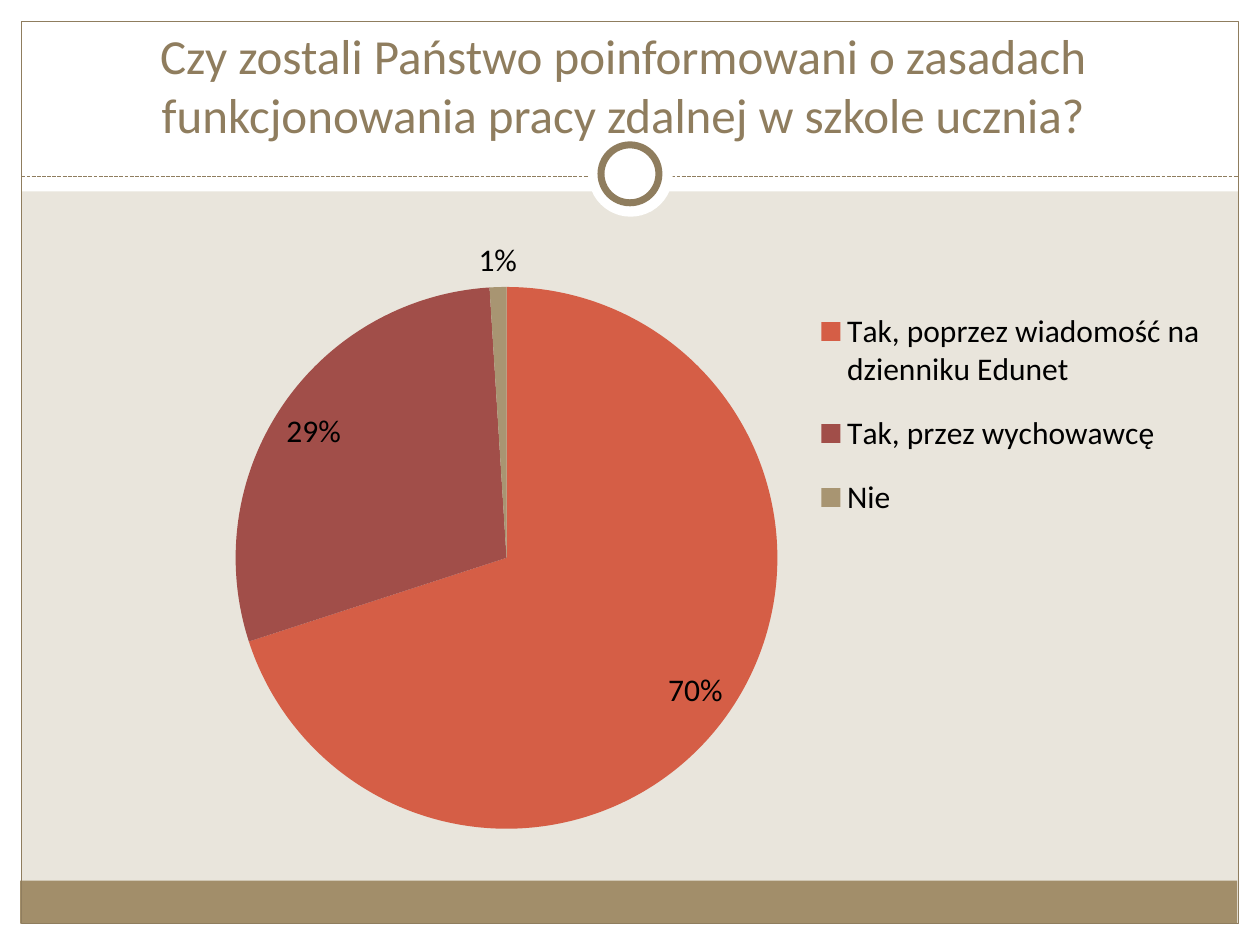
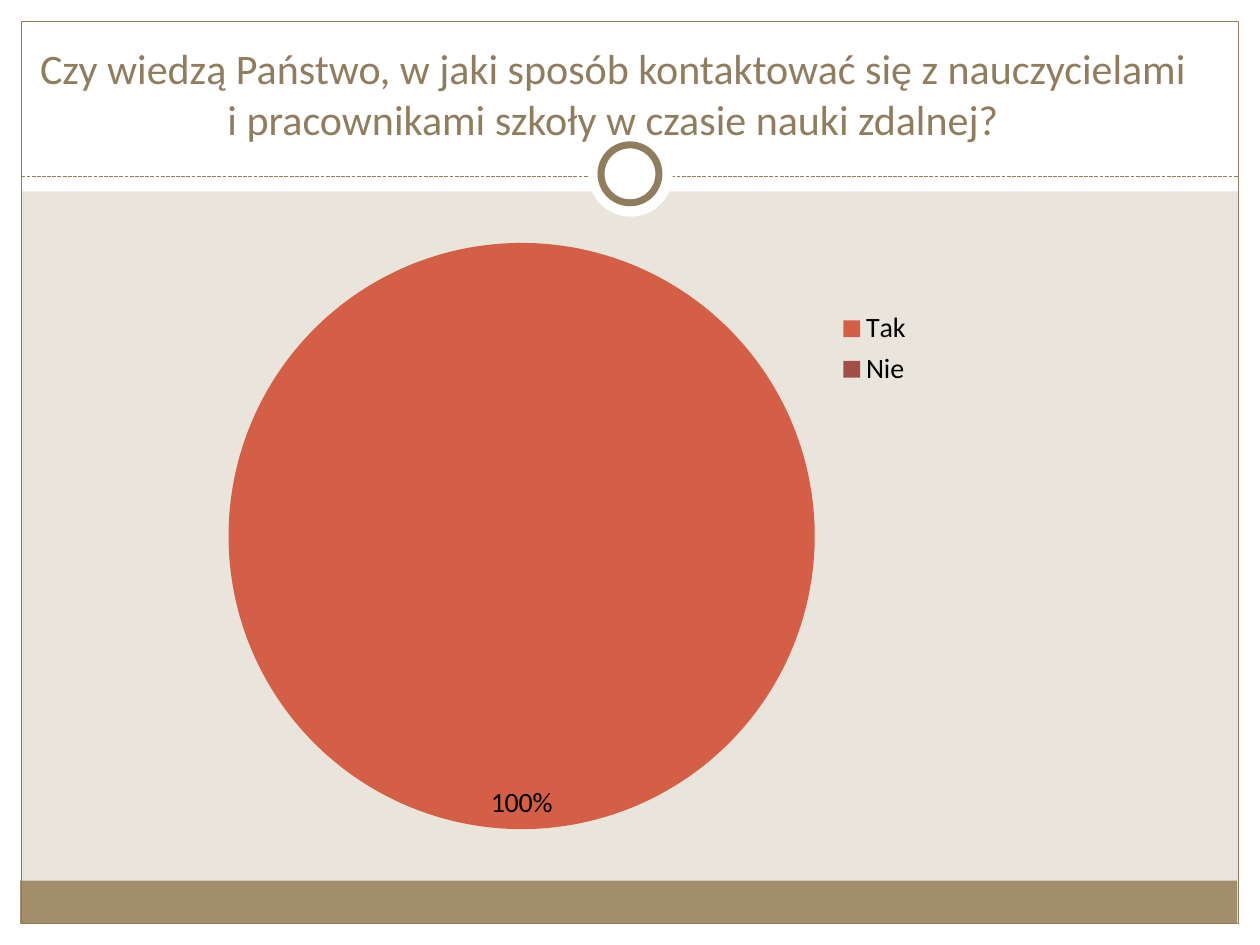
from lxml import etree
from pptx import Presentation
from pptx.chart.data import CategoryChartData
from pptx.dml.color import RGBColor
from pptx.enum.chart import XL_CHART_TYPE, XL_LABEL_POSITION, XL_LEGEND_POSITION
from pptx.enum.dml import MSO_LINE
from pptx.enum.shapes import MSO_CONNECTOR, MSO_SHAPE
from pptx.enum.text import MSO_ANCHOR, MSO_AUTO_SIZE, PP_ALIGN
from pptx.oxml import parse_xml
from pptx.oxml.ns import nsdecls, qn
from pptx.util import Inches, Pt

COLORS = {
    "paper": "E9E5DC", "white": "FFFFFF", "band": "A28E6A", "accent": "8F7D5E",
    "text": "000000", "slices": ["D55E46", "A14E49", "A89572"],
}
FONT = "Calibri"

QUESTIONS = [
    dict(title="Czy zostali Państwo poinformowani o zasadach "
               "funkcjonowania pracy zdalnej w szkole ucznia?",
         title_left=0.28, title_size=28, chart_left=0.67, chart_size=18,
         answers={"Tak, poprzez wiadomość na dzienniku Edunet": 70,
                  "Tak, przez wychowawcę": 29, "Nie": 1},
         pie=(0.12, 0.1, 0.43, 0.87), legend=(0.56, 0.1, 0.35, 0.41)),
    dict(title="Czy wiedzą Państwo, w jaki sposób kontaktować się z nauczycielami "
               "i pracownikami szkoły w czasie nauki zdalnej?",
         title_left=0.2, title_size=24, chart_left=-0.51, chart_size=16,
         answers={"Tak": 100, "Nie": 0},
         pie=(0.23, 0.03, 0.47, 0.94), legend=(0.7, 0.13, 0.09, 0.14)),
]


def write_text(frame, text, size, color, align=PP_ALIGN.CENTER, anchor=MSO_ANCHOR.BOTTOM):
    frame.word_wrap = True
    frame.auto_size = MSO_AUTO_SIZE.NONE
    frame.vertical_anchor = anchor
    paragraph = frame.paragraphs[0]
    paragraph.alignment = align
    run = paragraph.add_run()
    run.text = text
    run.font.name = FONT
    run.font.size = Pt(size)
    run.font.color.rgb = RGBColor.from_string(color)


def manual_layout(box, inner=False):
    """Layout element placing a chart part by fractions of the chart area."""
    target = '<c:layoutTarget val="inner"/>' if inner else ""
    modes = "".join(f'<c:{axis}Mode val="edge"/>' for axis in "xy")
    sizes = "".join(f'<c:{key} val="{value}"/>' for key, value in zip("xywh", box))
    return parse_xml(f'<c:layout {nsdecls("c")}><c:manualLayout>{target}{modes}{sizes}'
                     "</c:manualLayout></c:layout>")


deck = Presentation()
deck.slide_width, deck.slide_height = Inches(10), Inches(7.5)
layout = deck.slide_layouts[5]
layout.background.fill.solid()
layout.background.fill.fore_color.rgb = RGBColor.from_string(COLORS["paper"])
slides = [deck.slides.add_slide(layout) for _ in QUESTIONS]

# Shared frame: margins, bottom band, outline, divider and ring
rect, oval = MSO_SHAPE.RECTANGLE, MSO_SHAPE.OVAL
draft = slides[0].shapes
frame_parts = []
for kind, box, fill, line_width in [
    (rect, (0, 7.33, 10, 0.17), "white", None),
    (rect, (0, 0, 10, 1.52), "white", None),
    (rect, (0, 0, 0.17, 7.5), "white", None),
    (rect, (9.83, 0, 0.17, 7.5), "white", None),
    (rect, (0.16, 6.99, 9.66, 0.34), "band", None),
    (rect, (0.17, 0.17, 9.66, 7.16), None, 0.75),
    ("divider", (0.17, 1.4, 9.83, 1.4), None, 0.75),
    (oval, (4.67, 1.05, 0.67, 0.67), "white", None),
    (oval, (4.77, 1.15, 0.46, 0.46), "white", 4),
]:
    lengths = [Inches(value) for value in box]
    if kind == "divider":
        part = draft.add_connector(MSO_CONNECTOR.STRAIGHT, *lengths)
        part.line.dash_style = MSO_LINE.SQUARE_DOT
        etree.SubElement(part._element.spPr, qn("a:effectLst"))
    else:
        part = draft.add_shape(kind, *lengths)
        part.shadow.inherit = False
        if fill:
            part.fill.solid()
            part.fill.fore_color.rgb = RGBColor.from_string(COLORS[fill])
        else:
            part.fill.background()
    if line_width:
        part.line.color.rgb = RGBColor.from_string(COLORS["accent"])
        part.line.width = Pt(line_width)
    else:
        part.line.fill.background()
    frame_parts.append(part._element)

# Move the frame to the layout, behind its placeholders
layout_tree = layout.shapes._spTree
for index, element in enumerate(frame_parts):
    element.xpath(".//p:cNvPr")[0].set("id", str(100 + index))
    layout_tree.insert(2 + index, element)

for slide, question in zip(slides, QUESTIONS):
    # Question
    heading = slide.shapes.title
    heading.left, heading.top = Inches(question["title_left"]), Inches(0.36)
    heading.width, heading.height = Inches(9.33), Inches(0.83)
    write_text(heading.text_frame, question["title"],
               size=question["title_size"], color=COLORS["accent"])

    # Answers
    answers = CategoryChartData()
    answers.categories = list(question["answers"])
    answers.add_series("Series 1", list(question["answers"].values()))
    chart = slide.shapes.add_chart(
        XL_CHART_TYPE.PIE, Inches(question["chart_left"]), Inches(1.78),
        Inches(10), Inches(4.95), answers).chart
    chart.has_title = False
    chart.font.name = FONT
    chart.font.size = Pt(question["chart_size"])
    chart.font.color.rgb = RGBColor.from_string(COLORS["text"])

    # Slices and their percentages; the format leaves zero blank
    plot = chart.plots[0]
    plot.vary_by_categories = True
    series = plot.series[0]
    for index, color in zip(range(len(question["answers"])), COLORS["slices"]):
        fill = series.points[index].format.fill
        fill.solid()
        fill.fore_color.rgb = RGBColor.from_string(color)
    labels = series.data_labels
    labels.show_percentage = True
    labels.show_value = False
    labels.number_format = "0%;;"
    labels.number_format_is_linked = False
    labels.position = XL_LABEL_POSITION.BEST_FIT

    # Legend and placement
    chart.has_legend = True
    chart.legend.position = XL_LEGEND_POSITION.RIGHT
    chart.legend.include_in_layout = False
    plot_area = chart._chartSpace.chart.plotArea
    for old in plot_area.findall(qn("c:layout")):
        plot_area.remove(old)
    plot_area.insert(0, manual_layout(question["pie"], inner=True))
    legend = chart.legend._element
    for old in legend.findall(qn("c:layout")):
        legend.remove(old)
    legend.find(qn("c:legendPos")).addnext(manual_layout(question["legend"]))

deck.save("out.pptx")
